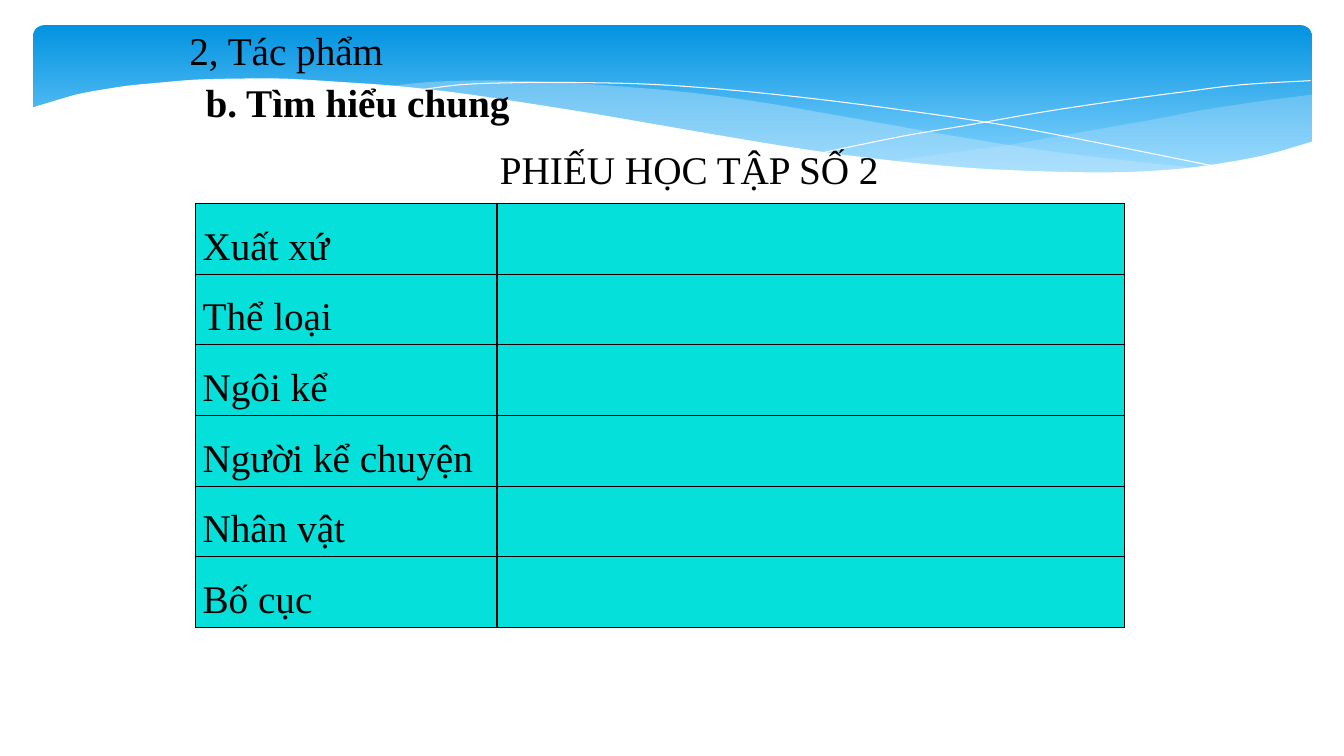
from lxml import etree
from pptx import Presentation
from pptx.dml.color import RGBColor
from pptx.enum.shapes import MSO_SHAPE as Preset
from pptx.enum.text import MSO_AUTO_SIZE as AutoSize, PP_ALIGN as Align
from pptx.oxml.ns import qn
from pptx.util import Inches, Pt

# Wave outlines: anchor points in inches
FRONT_WAVE = [(13.03, 1.4), (12.54, 1.54), (11.98, 1.64), (11.51, 1.69), (10.97, 1.71),
              (10.37, 1.7), (9.69, 1.67), (8.91, 1.6), (8.04, 1.49), (7.06, 1.33),
              (5.96, 1.14), (5.21, 1.02), (4.53, 0.92), (3.9, 0.85), (3.33, 0.81),
              (2.82, 0.78), (2.35, 0.78), (1.94, 0.79), (1.58, 0.82), (1.27, 0.85),
              (1.01, 0.89), (0.79, 0.93), (0.61, 0.98), (0.31, 1.07)]
RIGHT_WAVE_TOP = [(13.01, 0.94), (12.46, 1.01), (11.88, 1.1), (11.47, 1.18), (10.73, 1.31),
                  (10.05, 1.43), (9.41, 1.52), (8.82, 1.6)]
RIGHT_WAVE_BOTTOM = [(8.82, 1.6), (9.4, 1.65), (9.93, 1.69), (10.41, 1.72), (10.85, 1.72),
                     (11.26, 1.71), (11.63, 1.69), (12.07, 1.63), (12.47, 1.56), (13.01, 1.42)]
MIDDLE_WAVE_TOP = [(11.9, 1.67), (11.16, 1.59), (10.34, 1.49), (9.41, 1.34), (8.39, 1.16),
                   (7.59, 1.02), (6.86, 0.92), (6.19, 0.86), (5.6, 0.82), (5.06, 0.8),
                   (4.59, 0.8), (4.18, 0.82), (3.82, 0.86)]
MIDDLE_WAVE_BOTTOM = [(3.82, 0.86), (4.56, 0.94), (5.39, 1.06), (5.99, 1.16), (7.06, 1.35),
                      (7.79, 1.46), (8.46, 1.56), (9.07, 1.63), (9.63, 1.68), (10.14, 1.71),
                      (10.61, 1.73), (11.04, 1.73), (11.43, 1.71), (11.9, 1.67)]
FALLING_LINE = [(4.12, 0.9), (4.58, 0.84), (5.16, 0.82), (5.77, 0.82), (6.52, 0.84),
                (7.42, 0.91), (8.48, 1.03), (9.7, 1.2), (10.6, 1.36), (12.1, 1.66)]
RISING_LINE = [(8.18, 1.51), (8.96, 1.35), (9.61, 1.24), (10.35, 1.11), (11.15, 0.99),
               (11.75, 0.91), (12.32, 0.84), (13, 0.8)]

TOPICS = ["Xuất xứ", "Thể loại", "Ngôi kể", "Người kể chuyện", "Nhân vật", "Bố cục"]


def color(value):
    return RGBColor.from_string(value)


def smooth(anchors, steps=4):
    """Return points of a Catmull-Rom curve through the anchors."""
    padded = [anchors[0], *anchors, anchors[-1]]
    points = [anchors[0]]
    for a, b, c, d in zip(padded, padded[1:], padded[2:], padded[3:]):
        for step in range(1, steps + 1):
            t = step / steps
            points.append(tuple(
                (2 * q + (r - p) * t + (2 * p - 5 * q + 4 * r - s) * t**2
                 + (3 * q - p - 3 * r + s) * t**3) / 2
                for p, q, r, s in zip(a, b, c, d)))
    return points


def write_text(frame, text, size=28, bold=False, align=Align.LEFT, spacing=None, after=None):
    paragraph = frame.paragraphs[0]
    paragraph.alignment = align
    paragraph.line_spacing = spacing
    paragraph.space_after = after
    run = paragraph.add_run()
    run.text = text
    run.font.name = "Times New Roman"
    run.font.size = Pt(size)
    run.font.bold = bold
    run.font.color.rgb = color("000000")


class SlideBuilder:
    cell_fill = "05E0DB"
    border = "000000"

    def __init__(self, slide):
        self.slide = slide

    def banner(self, left, top, width, height, start, end):
        shape = self.slide.shapes.add_shape(
            Preset.ROUNDED_RECTANGLE, Inches(left), Inches(top), Inches(width), Inches(height))
        shape.shadow.inherit = False
        shape.adjustments[0] = 0.07
        shape.line.fill.background()
        shape.fill.gradient()
        shape.fill.gradient_angle = 270
        for stop, value, position in zip(shape.fill.gradient_stops, (start, end), (0, 0.9)):
            stop.color.rgb = color(value)
            stop.position = position

    def freeform(self, points, fill=None, opacity=100, line=None):
        vertices = [(Inches(x), Inches(y)) for x, y in points]
        builder = self.slide.shapes.build_freeform(*vertices[0], scale=1.0)
        builder.add_line_segments(vertices[1:], close=fill is not None)
        shape = builder.convert_to_shape()
        shape.shadow.inherit = False
        if fill:
            shape.fill.solid()
            shape.fill.fore_color.rgb = color(fill)
            if opacity < 100:
                solid = shape.fill.fore_color._xFill
                etree.SubElement(solid[0], qn("a:alpha"), val=str(opacity * 1000))
        else:
            shape.fill.background()
        if line:
            shape.line.color.rgb = color(line)
            shape.line.width = Pt(0)
        else:
            shape.line.fill.background()

    def text(self, text, left, top, width, height, wrap=True, **style):
        box = self.slide.shapes.add_textbox(
            Inches(left), Inches(top), Inches(width), Inches(height))
        frame = box.text_frame
        frame.word_wrap = wrap
        frame.auto_size = AutoSize.SHAPE_TO_FIT_TEXT
        write_text(frame, text, **style)

    def table(self, labels, left, top, widths, row_height):
        table = self.slide.shapes.add_table(
            len(labels), len(widths), Inches(left), Inches(top),
            Inches(sum(widths)), Inches(row_height * len(labels))).table
        table.first_row = table.horz_banding = False
        for column, width in zip(table.columns, widths):
            column.width = Inches(width)
        for row, label in zip(table.rows, labels):
            row.height = Inches(row_height)
            for cell in row.cells:
                self.style_cell(cell)
            write_text(row.cells[0].text_frame, label, align=Align.JUSTIFY,
                       spacing=1.5, after=Pt(10))

    def style_cell(self, cell):
        cell.margin_left = cell.margin_right = Inches(0.07)
        cell.margin_top = cell.margin_bottom = 0
        cell.fill.solid()
        cell.fill.fore_color.rgb = color(self.cell_fill)
        properties = cell._tc.get_or_add_tcPr()
        for index, side in enumerate(("lnL", "lnR", "lnT", "lnB")):
            edge = etree.Element(qn(f"a:{side}"), w=str(Pt(1)))
            solid = etree.SubElement(edge, qn("a:solidFill"))
            etree.SubElement(solid, qn("a:srgbClr"), val=self.border)
            properties.insert(index, edge)


def main():
    presentation = Presentation()
    presentation.slide_width = Inches(13.33)
    presentation.slide_height = Inches(7.5)
    page = SlideBuilder(presentation.slides.add_slide(presentation.slide_layouts[6]))

    # Banner and waves
    page.banner(0.33, 0.25, 12.68, 1.56, "0293E0", "83D3FE")
    page.freeform(smooth(RIGHT_WAVE_TOP) + smooth(RIGHT_WAVE_BOTTOM), "C6E7FC", 29)
    page.freeform(smooth(MIDDLE_WAVE_TOP) + smooth(MIDDLE_WAVE_BOTTOM), "C6E7FC", 40)
    page.freeform(smooth(FALLING_LINE), line="FFFFFF")
    page.freeform(smooth(RISING_LINE), line="FFFFFF")
    page.freeform(smooth(FRONT_WAVE) + [(0.31, 2.24), (13.03, 2.24)], "FFFFFF")

    # Headings and worksheet table
    page.text("2, Tác phẩm", 1.78, 0.21, 4.57, 0.57)
    page.table(TOPICS, 1.94, 2.02, (2.99, 6.22), 0.7)
    page.text("b. Tìm hiểu chung", 1.94, 0.78, 3.25, 0.53, wrap=False, bold=True, spacing=0.9)
    page.text("PHIẾU HỌC TẬP SỐ 2", 4.86, 1.39, 4.41, 0.57)

    presentation.save("out.pptx")


if __name__ == "__main__":
    main()
